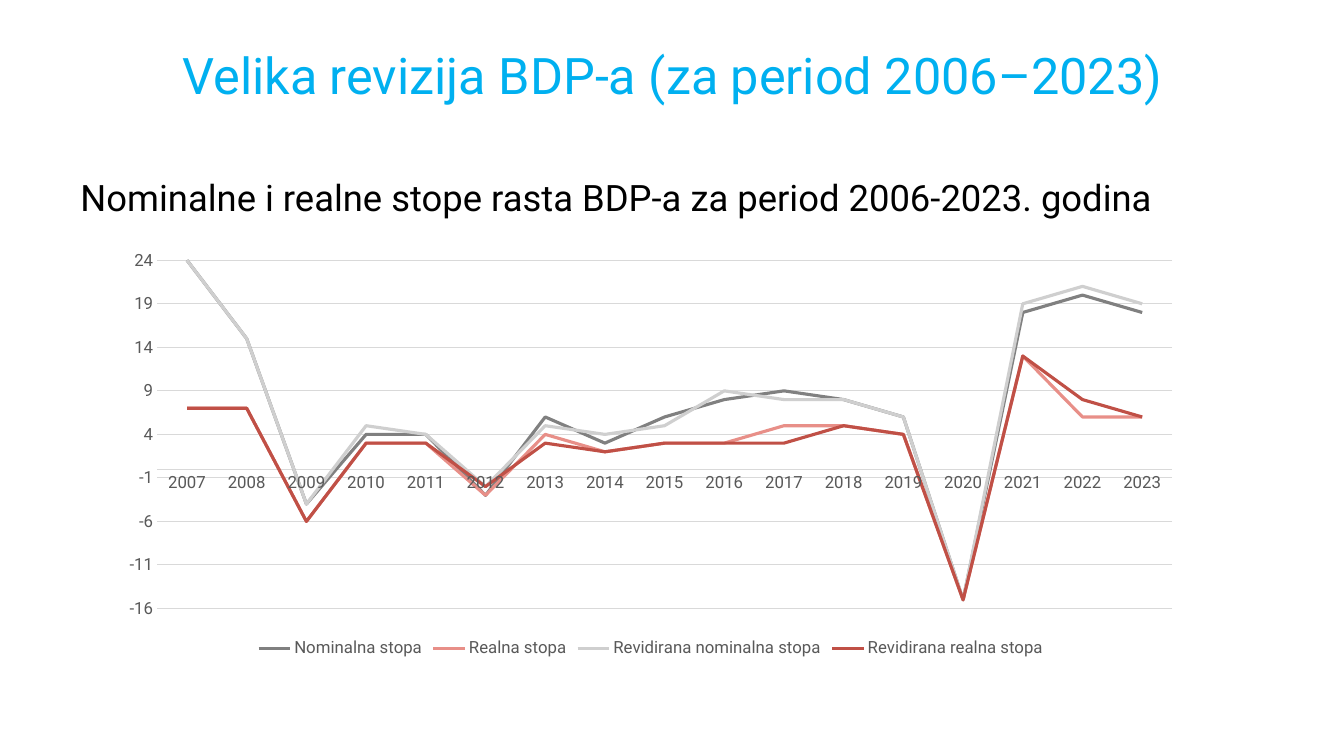
import dataclasses

import pptx
import pptx.chart.data
import pptx.dml.color
import pptx.enum.chart
import pptx.enum.text
import pptx.util

Inches = pptx.util.Inches
Align = pptx.enum.text.PP_ALIGN
Anchor = pptx.enum.text.MSO_ANCHOR
Enums = pptx.enum.chart


@dataclasses.dataclass(frozen=True)
class Theme:
    face: str = "Roboto"
    blue: str = "00B0F0"
    black: str = "000000"
    label: str = "595959"
    grid: str = "D9D9D9"
    title: float = 36
    body: float = 26
    small: float = 12
    thin: float = 0.75
    thick: float = 2.25


@dataclasses.dataclass(frozen=True)
class Box:
    left: float
    top: float
    width: float
    height: float

    def place(self) -> list[int]:
        return [Inches(side) for side in dataclasses.astuple(self)]


@dataclasses.dataclass(frozen=True)
class Words:
    text: str
    box: Box
    size: float
    color: str
    frame: dict
    para: dict


@dataclasses.dataclass(frozen=True)
class Rate:
    name: str
    color: str
    values: tuple[int, ...]


THEME = Theme()

# Texts
TEXTS = (
    Words("Velika revizija BDP-a (za period 2006–2023)",
          Box(0.92, 0.4, 11.5, 0.65), THEME.title, THEME.blue,
          dict(vertical_anchor=Anchor.BOTTOM, margin_left=0, margin_top=0,
               margin_right=0, margin_bottom=0),
          dict(alignment=Align.CENTER)),
    Words("Nominalne i realne stope rasta BDP-a za period 2006-2023. godina",
          Box(0.7, 1.74, 12.07, 0.6), THEME.body, THEME.black,
          dict(vertical_anchor=Anchor.TOP), dict(alignment=Align.LEFT)),
)

# Growth rates by year
YEARS = range(2007, 2024)
RATES = (
    Rate("Nominalna stopa", "808080",
         (24, 15, -4, 4, 4, -3, 6, 3, 6, 8, 9, 8, 6, -15, 18, 20, 18)),
    Rate("Realna stopa", "E88F88",
         (7, 7, -6, 3, 3, -3, 4, 2, 3, 3, 5, 5, 4, -15, 13, 6, 6)),
    Rate("Revidirana nominalna stopa", "CFCFCF",
         (24, 15, -4, 5, 4, -2, 5, 4, 5, 9, 8, 8, 6, -15, 19, 21, 19)),
    Rate("Revidirana realna stopa", "C05046",
         (7, 7, -6, 3, 3, -2, 3, 2, 3, 3, 3, 5, 4, -15, 13, 8, 6)),
)


def apply(target: object, values: dict) -> None:
    for name, value in values.items():
        setattr(target, name, value)


def style(font: object, size: float, color: str) -> None:
    apply(font, dict(name=THEME.face, size=pptx.util.Pt(size)))
    font.color.rgb = pptx.dml.color.RGBColor.from_string(color)


def stroke(line: object, color: str, width: float) -> None:
    line.color.rgb = pptx.dml.color.RGBColor.from_string(color)
    line.width = pptx.util.Pt(width)


def write(slide: object, words: Words) -> None:
    frame = slide.shapes.add_textbox(*words.box.place()).text_frame
    apply(frame, dict(word_wrap=True) | words.frame)
    para = frame.paragraphs[0]
    apply(para, dict(text=words.text, line_spacing=0.9) | words.para)
    style(para.runs[0].font, words.size, words.color)


def plot(slide: object, box: Box) -> None:
    data = pptx.chart.data.CategoryChartData(number_format="0")
    data.categories = [str(year) for year in YEARS]
    for rate in RATES:
        data.add_series(rate.name, rate.values)
    chart = slide.shapes.add_chart(
        Enums.XL_CHART_TYPE.LINE, *box.place(), data).chart
    apply(chart, dict(has_title=False, has_legend=True))
    style(chart.font, THEME.small, THEME.black)

    # Lines
    chart.plots[0].vary_by_categories = False
    for line, rate in zip(chart.series, RATES):
        line.smooth = False
        line.marker.style = Enums.XL_MARKER_STYLE.NONE
        stroke(line.format.line, rate.color, THEME.thick)

    # Axes and grid
    ticks = dict(major_tick_mark=Enums.XL_TICK_MARK.NONE,
                 minor_tick_mark=Enums.XL_TICK_MARK.NONE)
    years, rates = chart.category_axis, chart.value_axis
    apply(years, ticks)
    apply(rates, ticks | dict(minimum_scale=-16, maximum_scale=25,
                              major_unit=5, has_major_gridlines=True))
    apply(rates.tick_labels,
          dict(number_format="0", number_format_is_linked=False))
    stroke(years.format.line, THEME.grid, THEME.thin)
    stroke(rates.major_gridlines.format.line, THEME.grid, THEME.thin)
    rates.format.line.fill.background()

    # Legend and label fonts
    apply(chart.legend, dict(position=Enums.XL_LEGEND_POSITION.BOTTOM,
                             include_in_layout=False))
    for part in (years.tick_labels, rates.tick_labels, chart.legend):
        style(part.font, THEME.small, THEME.label)


def main() -> None:
    deck = pptx.Presentation()
    apply(deck, dict(slide_width=Inches(13.33), slide_height=Inches(7.5)))
    slide = deck.slides.add_slide(deck.slide_layouts[6])
    for words in TEXTS:
        write(slide, words)
    plot(slide, Box(1.07, 2.4, 10.77, 4.17))
    deck.save("out.pptx")


if __name__ == "__main__":
    main()
